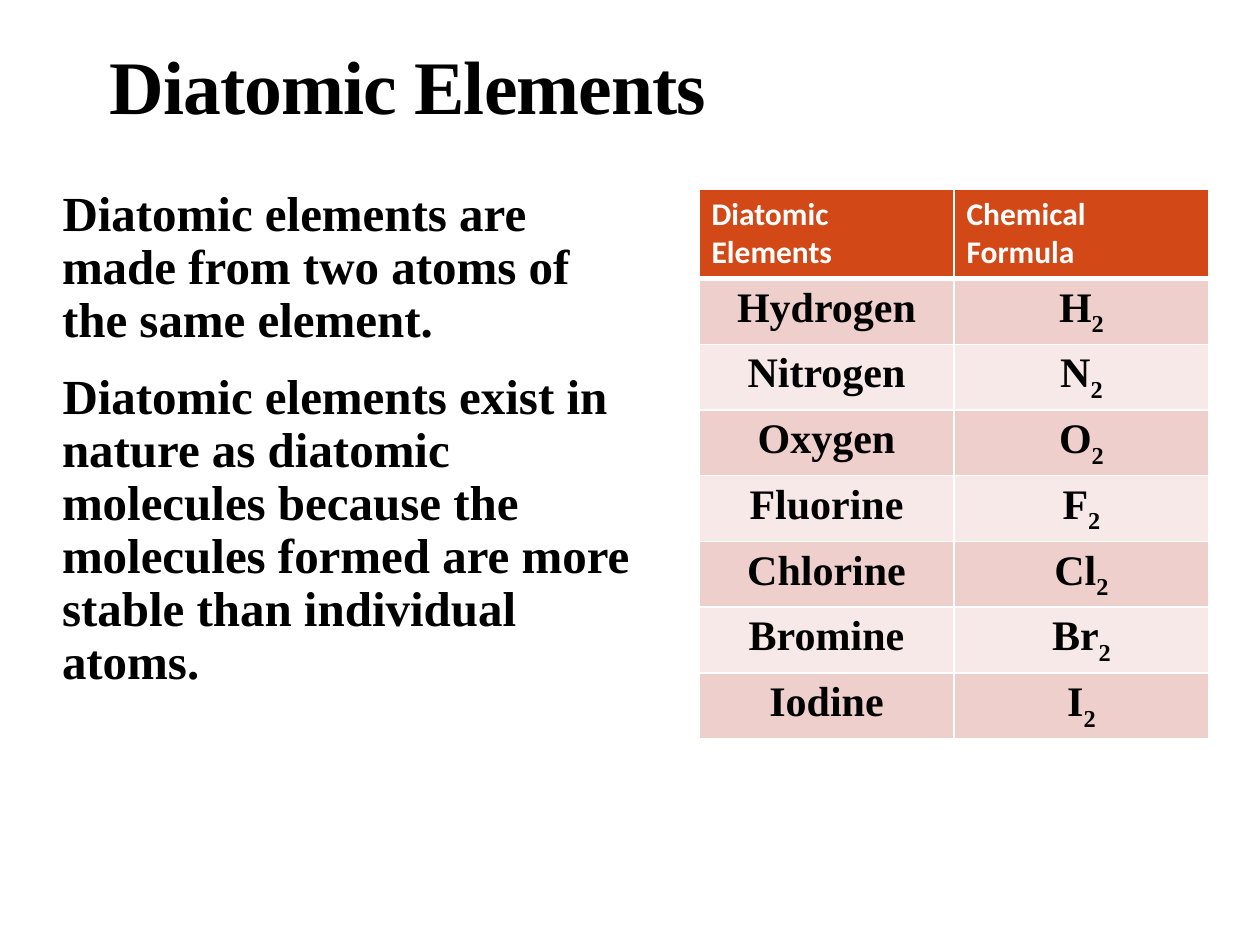
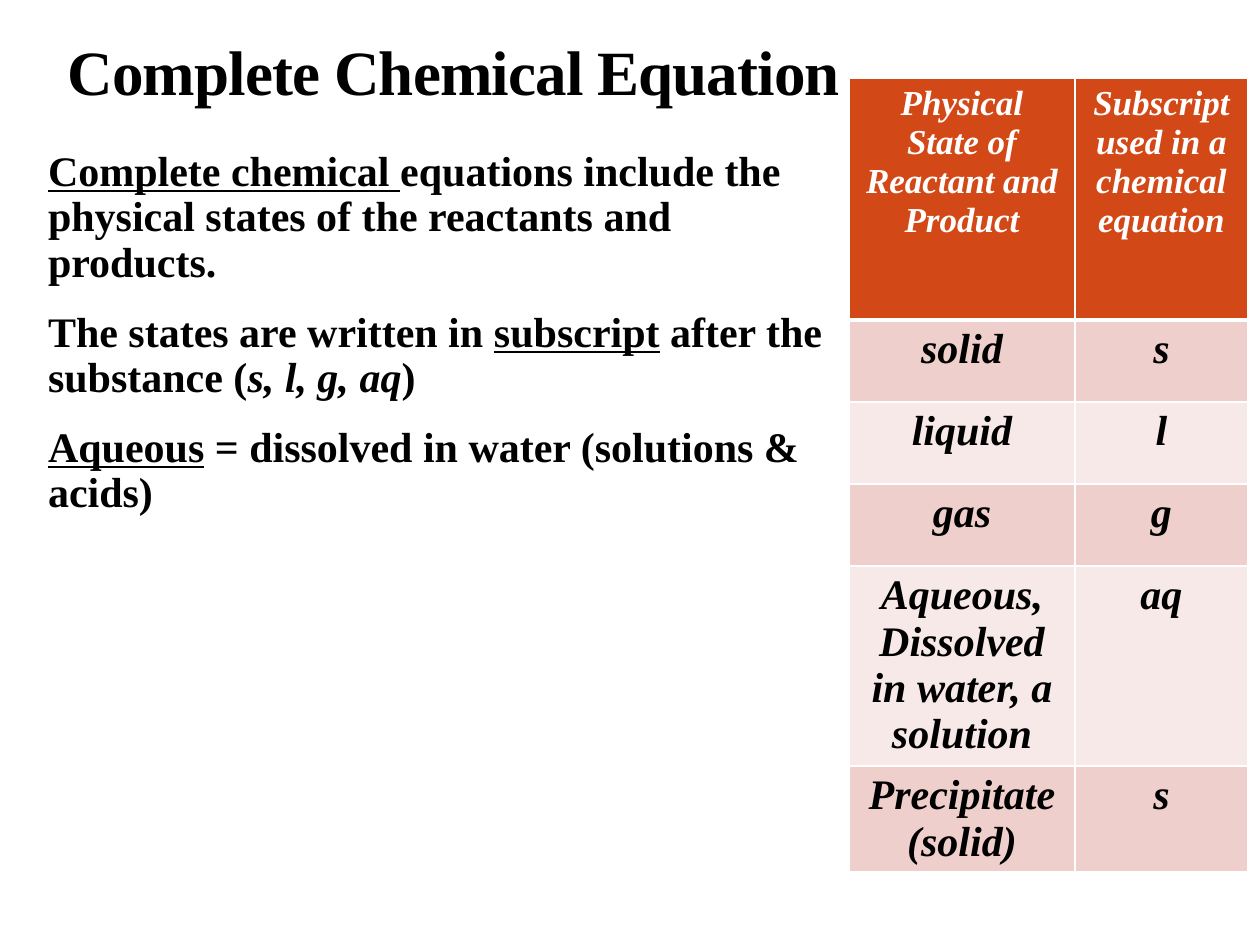
from lxml import etree
from pptx import Presentation
from pptx import util as u
from pptx.dml.color import RGBColor
from pptx.enum import text
from pptx.oxml import ns

SCALE = 914400 / 126
BLACK = RGBColor(0x00, 0x00, 0x00)
WHITE = RGBColor(0xFF, 0xFF, 0xFF)
ORANGE = RGBColor(0xD3, 0x48, 0x17)
BANDS = [RGBColor(0xEF, 0xCF, 0xCC), RGBColor(0xF7, 0xE9, 0xE8)]
SERIF = "Times New Roman"


def px(n):
    return u.Emu(round(n * SCALE))


def style(p, font, size, color, italic=None):
    for r in p.runs:
        r.font.name = font
        r.font.size = u.Pt(size)
        r.font.bold = True
        r.font.color.rgb = color
        if italic:
            r.font.italic = True


elements = [("Hydrogen", "H"), ("Nitrogen", "N"), ("Oxygen", "O"), ("Fluorine", "F"),
            ("Chlorine", "Cl"), ("Bromine", "Br"), ("Iodine", "I")]

slides = [
    dict(
        title="Diatomic Elements", title_size=43.2, title_box=(97, 39, 1056, 97),
        body_size=28, body_box=(49, 183, 591, 631),
        body=[
            [("Diatomic elements are made from two atoms of the same element.", "")],
            [("Diatomic elements exist in nature as diatomic molecules because the "
              "molecules formed are more stable than individual atoms.", "")],
        ],
        table_box=(699, 189, 510, 529), cols=[255, 255], rows=[52] * 8,
        header_font="Calibri", header_size=18, header_align=text.PP_ALIGN.LEFT,
        italic=False, subscript="2",
        cells=[("Diatomic Elements", "Chemical Formula")] + elements,
    ),
    dict(
        title="Complete Chemical Equation", title_size=36, title_box=(55, 13, 1097, 102),
        body_size=24, body_box=(35, 144, 791, 766),
        body=[
            [("Complete chemical ", "u"),
             ("equations include the physical states of the reactants and products.", "")],
            [("The states are written in ", ""), ("subscript", "u"),
             (" after the substance (", ""), ("s, l, g, aq", "i"), (")", "")],
            [("Aqueous", "u"), (" = dissolved in water (solutions & acids)", "")],
        ],
        table_box=(849, 78, 399, 814), cols=[226, 173], rows=[242, 82, 82, 82, 200, 82],
        header_font=SERIF, header_size=20, header_align=text.PP_ALIGN.CENTER,
        italic=True, subscript="",
        cells=[("Physical State of Reactant and Product",
                "Subscript used in a chemical equation"),
               ("solid", "s"), ("liquid", "l"), ("gas", "g"),
               ("Aqueous, Dissolved in water, a solution", "aq"),
               ("Precipitate\n(solid)", "s")],
    ),
]

prs = Presentation()
prs.slide_width, prs.slide_height = px(1260), px(945)

for d in slides:
    s = prs.slides.add_slide(prs.slide_layouts[1])

    sp = s.shapes.title
    sp.left, sp.top, sp.width, sp.height = map(px, d["title_box"])
    tf = sp.text_frame
    tf.text = d["title"]
    tf.auto_size = text.MSO_AUTO_SIZE.NONE
    tf.vertical_anchor = text.MSO_ANCHOR.BOTTOM
    p = tf.paragraphs[0]
    p.alignment = text.PP_ALIGN.LEFT
    p.line_spacing = 0.85
    style(p, SERIF, d["title_size"], BLACK)
    p.runs[0].font._element.set("spc", "-50")

    sp = s.placeholders[1]
    sp.left, sp.top, sp.width, sp.height = map(px, d["body_box"])
    tf = sp.text_frame
    tf.auto_size = text.MSO_AUTO_SIZE.NONE
    tf.margin_left = tf.margin_right = 0
    for i, runs in enumerate(d["body"]):
        p = tf.paragraphs[0] if i == 0 else tf.add_paragraph()
        p.line_spacing = 0.9
        p.space_before = u.Pt(12 if i else 0)
        p.space_after = u.Pt(2)
        pPr = p._p.get_or_add_pPr()
        pPr.set("marL", str(px(13)))
        pPr.set("indent", str(-px(13)))
        clr = etree.SubElement(pPr, ns.qn("a:buClr"))
        etree.SubElement(clr, ns.qn("a:srgbClr"), val=str(ORANGE))
        etree.SubElement(pPr, ns.qn("a:buChar"), char=" ")
        for words, mark in runs:
            r = p.add_run()
            r.text = words
            if mark == "u":
                r.font.underline = True
            if mark == "i":
                r.font.italic = True
        style(p, SERIF, d["body_size"], BLACK)

    frame = s.shapes.add_table(len(d["rows"]), len(d["cols"]), *map(px, d["table_box"]))
    tbl = frame.table
    for col, w in zip(tbl.columns, d["cols"]):
        col.width = px(w)
    for row, h in zip(tbl.rows, d["rows"]):
        row.height = px(h)
    frame.height = px(d["table_box"][3])

    for i, row in enumerate(d["cells"]):
        for j, words in enumerate(row):
            cell = tbl.cell(i, j)
            cell.fill.solid()
            cell.fill.fore_color.rgb = BANDS[(i - 1) % 2] if i else ORANGE
            cell.text_frame.text = words
            if i and j and d["subscript"]:
                r = cell.text_frame.paragraphs[0].add_run()
                r.text = d["subscript"]
                r.font._element.set("baseline", "-25000")
            for p in cell.text_frame.paragraphs:
                p.alignment = text.PP_ALIGN.CENTER if i else d["header_align"]
                if i:
                    style(p, SERIF, 24, BLACK, d["italic"])
                else:
                    style(p, d["header_font"], d["header_size"], WHITE, d["italic"])
            tcPr = cell._tc.get_or_add_tcPr()
            for k, side in enumerate(["lnL", "lnR", "lnT", "lnB"]):
                thick = (i, side) in [(0, "lnB"), (1, "lnT")]
                ln = etree.Element(ns.qn("a:" + side), w=str(u.Pt(3 if thick else 1)))
                fill = etree.SubElement(ln, ns.qn("a:solidFill"))
                etree.SubElement(fill, ns.qn("a:srgbClr"), val=str(WHITE))
                tcPr.insert(k, ln)

prs.save("out.pptx")
